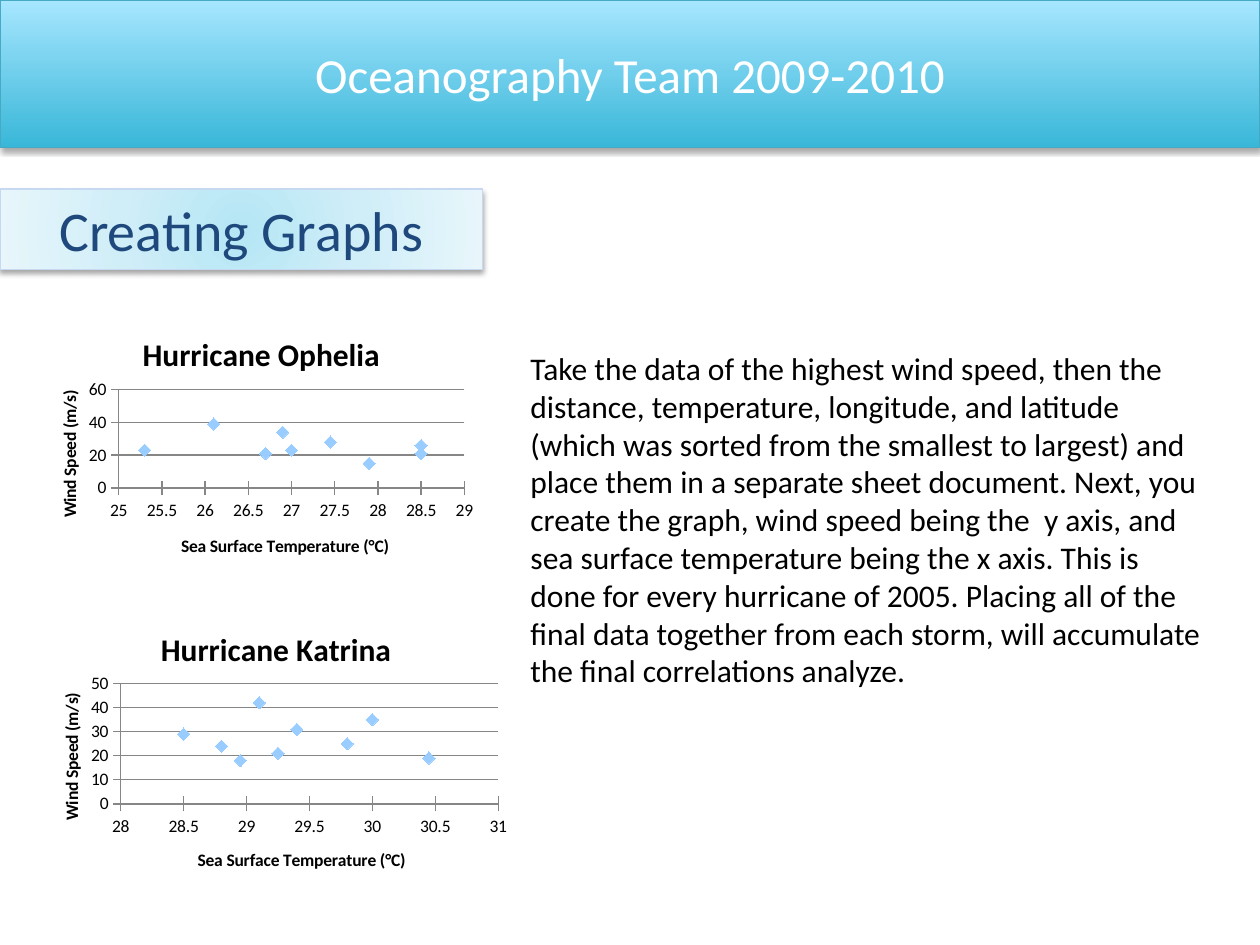
from dataclasses import dataclass

from lxml.etree import SubElement
from pptx import Presentation
from pptx.chart.data import XyChartData
from pptx.dml.color import RGBColor
from pptx.enum.chart import XL_CHART_TYPE, XL_MARKER_STYLE, XL_TICK_MARK
from pptx.enum.shapes import MSO_SHAPE
from pptx.enum.text import MSO_ANCHOR, MSO_AUTO_SIZE, PP_ALIGN
from pptx.oxml import parse_xml
from pptx.oxml.ns import nsdecls, qn
from pptx.util import Inches, Pt


@dataclass(frozen=True)
class Theme:
    font: str = "Calibri"
    white: str = "FFFFFF"
    black: str = "000000"
    navy: str = "1F497D"
    banner_line: str = "46AAC5"
    heading_line: str = "C6D9F1"
    grid: str = "868686"
    marker: str = "99CCFF"
    banner_stops: tuple = ((0, "39B7D8"), (100, "A7E6FF"))
    heading_stops: tuple = ((0, "B5E6F5"), (50, "D0EEF8"), (100, "E8F6FB"))
    banner_size: int = 28
    heading_size: int = 32
    body_size: int = 18
    label_size: int = 10


def format_font(font, size, color, bold=False):
    font.name = Theme.font
    font.size = Pt(size)
    font.bold = bold
    font.color.rgb = RGBColor.from_string(color)


def write_text(text_frame, text, size, color, bold=False, align=None):
    paragraph = text_frame.paragraphs[0]
    if align is not None:
        paragraph.alignment = align
    run = paragraph.add_run()
    run.text = text
    format_font(run.font, size, color, bold)
    return paragraph


def place_in_chart(element, position, layout_index):
    """Set a manual layout, in fractions of the chart: left, top[, width, height]."""
    for old_layout in element.findall(qn("c:layout")):
        element.remove(old_layout)
    layout = parse_xml(f'<c:layout {nsdecls("c")}/>')
    element.insert(layout_index, layout)
    manual = SubElement(layout, qn("c:manualLayout"))
    if len(position) == 4:
        SubElement(manual, qn("c:layoutTarget")).set("val", "inner")
    for mode in ("xMode", "yMode"):
        SubElement(manual, qn(f"c:{mode}")).set("val", "edge")
    for name, value in zip("xywh", position):
        SubElement(manual, qn(f"c:{name}")).set("val", str(value))


class SlideBuilder:
    def __init__(self, slide, theme):
        self.slide = slide
        self.theme = theme

    def place(self, shape, left, top, width, height):
        shape.left, shape.top = Inches(left), Inches(top)
        shape.width, shape.height = Inches(width), Inches(height)

    def style_panel(self, shape, stops, direction, line_color):
        """Gradient fill, thin outline and a soft shadow below."""
        shape.fill.background()
        properties = shape.element.spPr
        stop_xml = "".join(
            f'<a:gs pos="{position * 1000}"><a:srgbClr val="{color}"/></a:gs>'
            for position, color in stops
        )
        gradient = parse_xml(
            f'<a:gradFill {nsdecls("a")} rotWithShape="1">'
            f"<a:gsLst>{stop_xml}</a:gsLst>{direction}</a:gradFill>"
        )
        properties.replace(properties.find(qn("a:noFill")), gradient)
        shape.line.color.rgb = RGBColor.from_string(line_color)
        shape.line.width = Pt(0.75)
        shape.shadow.inherit = False
        effects = properties.find(qn("a:effectLst"))
        effects.append(parse_xml(
            f'<a:outerShdw {nsdecls("a")} blurRad="{Pt(3.1)}" dist="{Pt(1.8)}" '
            'dir="5400000" rotWithShape="0"><a:srgbClr val="000000">'
            '<a:alpha val="35000"/></a:srgbClr></a:outerShdw>'
        ))

    def banner(self, text, box):
        shape = self.slide.shapes.add_shape(MSO_SHAPE.RECTANGLE, 0, 0, 0, 0)
        self.place(shape, *box)
        self.style_panel(shape, self.theme.banner_stops,
                         '<a:lin ang="16200000" scaled="0"/>', self.theme.banner_line)
        shape.text_frame.vertical_anchor = MSO_ANCHOR.MIDDLE
        write_text(shape.text_frame, text, size=self.theme.banner_size,
                   color=self.theme.white, align=PP_ALIGN.CENTER)

    def heading(self, text, box):
        shape = self.slide.shapes.title
        self.place(shape, *box)
        self.style_panel(
            shape, self.theme.heading_stops,
            '<a:path path="circle"><a:fillToRect l="50000" t="50000" r="50000" b="50000"/></a:path>',
            self.theme.heading_line)
        shape.text_frame.auto_size = MSO_AUTO_SIZE.NONE
        shape.text_frame.vertical_anchor = MSO_ANCHOR.MIDDLE
        write_text(shape.text_frame, text, size=self.theme.heading_size,
                   color=self.theme.navy, align=PP_ALIGN.CENTER)

    def body(self, text, box):
        shape = self.slide.placeholders[1]
        self.place(shape, *box)
        shape.text_frame.auto_size = MSO_AUTO_SIZE.NONE
        shape.text_frame.word_wrap = True
        paragraph = write_text(shape.text_frame, text, size=self.theme.body_size,
                               color=self.theme.black)
        properties = paragraph._p.get_or_add_pPr()
        properties.set("marL", "0")
        properties.set("indent", "0")
        SubElement(properties, qn("a:buNone"))
        paragraph.space_before = Pt(0)

    def axis(self, axis, title, limits, title_position):
        axis.minimum_scale, axis.maximum_scale, axis.major_unit = limits
        axis.major_tick_mark = XL_TICK_MARK.CROSS
        axis.minor_tick_mark = XL_TICK_MARK.NONE
        axis.format.line.color.rgb = RGBColor.from_string(self.theme.grid)
        axis.tick_labels.number_format = "General"
        axis.tick_labels.number_format_is_linked = False
        format_font(axis.tick_labels.font, self.theme.label_size, self.theme.black)
        write_text(axis.axis_title.text_frame, title, size=self.theme.label_size,
                   color=self.theme.black, bold=True)
        place_in_chart(axis.axis_title._element, title_position, 1)

    def scatter(self, title, points, box, x_limits, y_limits, layout):
        data = XyChartData()
        series_data = data.add_series("Series 1")
        for x, y in points:
            series_data.add_data_point(x, y)
        chart = self.slide.shapes.add_chart(
            XL_CHART_TYPE.XY_SCATTER, *map(Inches, box), data).chart
        chart.has_legend = False
        format_font(chart.font, self.theme.label_size, self.theme.black)
        write_text(chart.chart_title.text_frame, title, size=self.theme.body_size,
                   color=self.theme.black, bold=True)
        place_in_chart(chart.chart_title._element, layout["title"], 1)

        # Axes and gridlines
        x_axis, y_axis = chart.category_axis, chart.value_axis
        self.axis(x_axis, "Sea Surface Temperature (°C)", x_limits, layout["x_title"])
        self.axis(y_axis, "Wind Speed (m/s)", y_limits, layout["y_title"])
        rotation = y_axis.axis_title.text_frame._txBody.bodyPr
        rotation.set("rot", "-5400000")
        rotation.set("vert", "horz")
        x_axis.has_major_gridlines = False
        y_axis.has_major_gridlines = True
        y_axis.major_gridlines.format.line.color.rgb = RGBColor.from_string(self.theme.grid)
        place_in_chart(chart._chartSpace.xpath("c:chart/c:plotArea")[0], layout["plot"], 0)

        # Markers only
        plot = chart.plots[0]
        plot.vary_by_categories = False
        series = plot.series[0]
        series.format.line.fill.background()
        series.marker.style = XL_MARKER_STYLE.DIAMOND
        series.marker.size = 7
        series.marker.format.fill.solid()
        series.marker.format.fill.fore_color.rgb = RGBColor.from_string(self.theme.marker)
        series.marker.format.line.fill.background()


def main():
    presentation = Presentation()
    presentation.slide_width, presentation.slide_height = Inches(10), Inches(7.5)
    slide = presentation.slides.add_slide(presentation.slide_layouts[1])
    builder = SlideBuilder(slide, Theme())

    # Banner and heading
    builder.banner("Oceanography Team 2009-2010", (0, 0, 10, 1.17))
    builder.heading("Creating Graphs", (0, 1.5, 3.83, 0.64))

    # Hurricane charts
    builder.scatter(
        "Hurricane Ophelia",
        [(27.9, 15), (28.5, 21), (27, 23), (26.1, 39), (28.5, 26),
         (26.9, 34), (27.45, 28), (26.7, 21), (25.3, 23)],
        box=(0.22, 2.42, 3.61, 2.17), x_limits=(25, 29, 0.5), y_limits=(0, 60, 20),
        layout={"title": (0.24, 0.08), "x_title": (0.33, 0.83),
                "y_title": (0.06, 0.3), "plot": (0.2, 0.31, 0.76, 0.36)})
    builder.scatter(
        "Hurricane Katrina",
        [(28.5, 29), (28.8, 24), (28.95, 18), (29.1, 42), (29.25, 21),
         (29.4, 31), (29.8, 25), (30, 35), (30.45, 19)],
        box=(0.22, 4.75, 3.89, 2.33), x_limits=(28, 31, 0.5), y_limits=(0, 50, 10),
        layout={"title": (0.26, 0.08), "x_title": (0.34, 0.84),
                "y_title": (0.06, 0.31), "plot": (0.19, 0.29, 0.77, 0.41)})

    # Explanation
    builder.body(
        "Take the data of the highest wind speed, then the distance, temperature, "
        "longitude, and latitude (which was sorted from the smallest to largest) and "
        "place them in a separate sheet document. Next, you create the graph, wind speed "
        "being the  y axis, and sea surface temperature being the x axis. This is done "
        "for every hurricane of 2005. Placing all of the final data together from each "
        "storm, will accumulate the final correlations analyze.",
        (4.11, 2.72, 5.58, 2.83))

    presentation.save("out.pptx")


if __name__ == "__main__":
    main()
